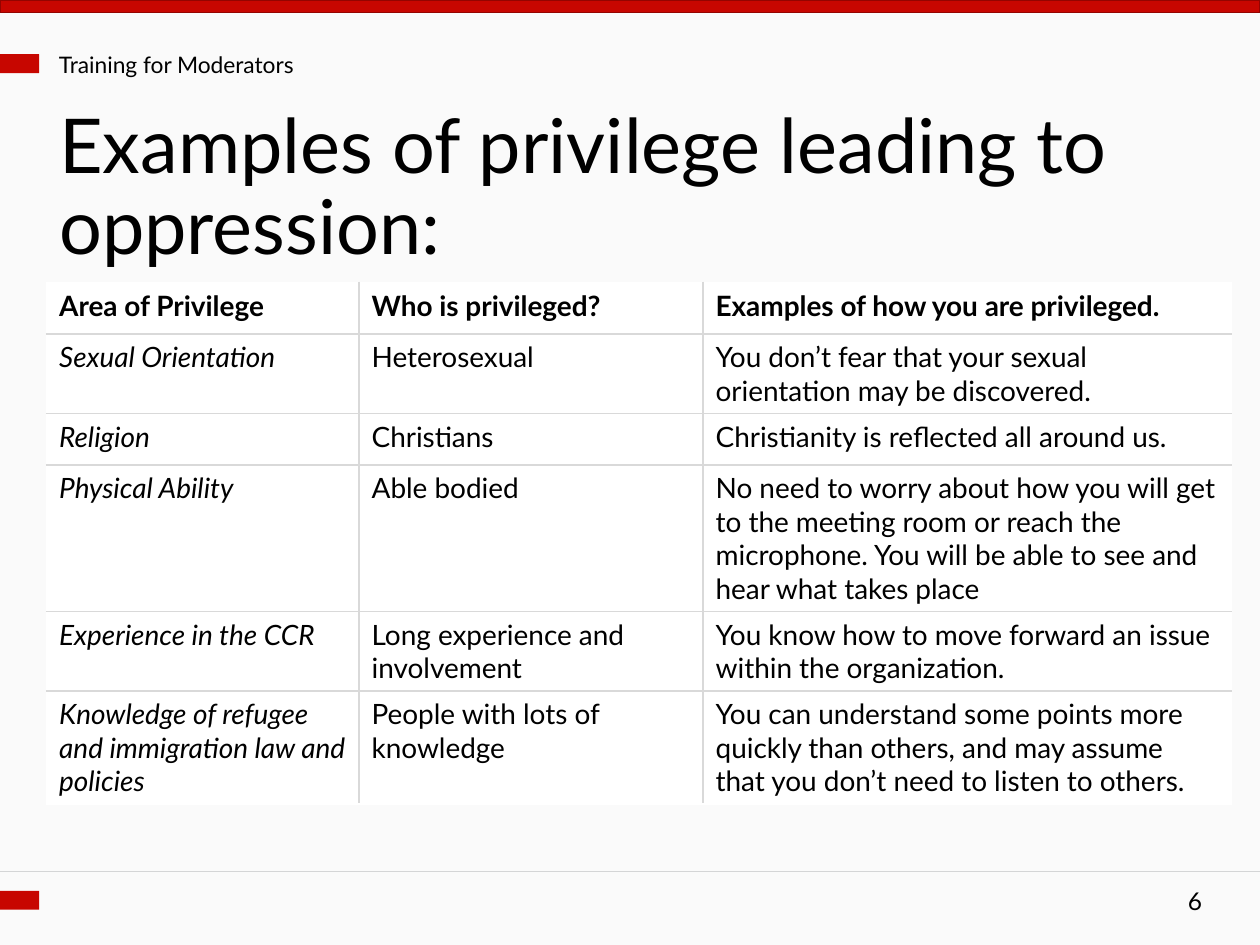
"""Builds the slide on examples of privilege leading to oppression."""
from lxml import etree
from pptx import Presentation
from pptx import util as u
from pptx.dml.color import RGBColor
from pptx.enum import shapes, text
from pptx.oxml.ns import qn

FONT = "Lato"
COLORS = {"bg": "FAFAFA", "red": "C70600", "dark_red": "930400", "rule": "D4D5D6",
          "grid": "D9D9D9", "white": "FFFFFF", "black": "000000"}
TITLE = "Examples of privilege leading to oppression:"
HEADER = "Training for Moderators"
PAGE = "6"
ROWS = [
    ("Area of Privilege", "Who is privileged?", "Examples of how you are privileged."),
    ("Sexual Orientation", "Heterosexual",
     "You don’t fear that your sexual orientation may be discovered."),
    ("Religion", "Christians", "Christianity is reflected all around us."),
    ("Physical Ability", "Able bodied",
     "No need to worry about how you will get to the meeting room or reach the "
     "microphone. You will be able to see and hear what takes place"),
    ("Experience in the CCR", "Long experience and involvement",
     "You know how to move forward an issue within the organization."),
    ("Knowledge of refugee and immigration law and policies",
     "People with lots of knowledge",
     "You can understand some points more quickly than others, and may assume "
     "that you don’t need to listen to others."),
]
COL_WIDTHS = (2.48, 2.73, 4.19)
ROW_HEIGHT = 0.41
TABLE_AT = (0.37, 2.24, sum(COL_WIDTHS), 4.14)
BAR_AT = (0, 0, 10, 0.1)
TAB_TOPS = (0.43, 7.07)
RULE_Y = 6.92


def rgb(name):
    return RGBColor.from_string(COLORS[name])


def inches(values):
    return [u.Inches(v) for v in values]


def write(tf, words, size, align=text.PP_ALIGN.LEFT, **font):
    p = tf.paragraphs[0]
    p.alignment = align
    r = p.add_run()
    r.text = words
    for key, value in {"name": FONT, "size": u.Pt(size), **font}.items():
        setattr(r.font, key, value)
    r.font.color.rgb = rgb("black")
    return p


def frame_text(sp):
    tf = sp.text_frame
    for key, value in {"word_wrap": True, "auto_size": text.MSO_AUTO_SIZE.NONE,
                       "vertical_anchor": text.MSO_ANCHOR.MIDDLE}.items():
        setattr(tf, key, value)
    return tf


def add_text(s, at, words, size, align=text.PP_ALIGN.LEFT):
    write(frame_text(s.shapes.add_textbox(*inches(at))), words, size, align)


def add_block(s, kind, at, line=None):
    sp = s.shapes.add_shape(kind, *inches(at))
    sp.shadow.inherit = False
    sp.fill.solid()
    sp.fill.fore_color.rgb = rgb("red")
    if line:
        sp.line.color.rgb = rgb(line)
        sp.line.width = u.Pt(1)
    else:
        sp.line.fill.background()
    return sp


def add_rule(s, y):
    rule = s.shapes.add_connector(shapes.MSO_CONNECTOR.STRAIGHT, *inches((0, y, 10, y)))
    rule.line.color.rgb = rgb("rule")
    rule.line.width = u.Pt(0.5)
    etree.SubElement(rule.element.spPr, qn("a:effectLst"))


def set_borders(cell, outer):
    tc_pr = cell._tc.get_or_add_tcPr()
    for side in "LRTB":
        ln = etree.SubElement(tc_pr, qn(f"a:ln{side}"), w=str(u.Pt(1)))
        fill = etree.SubElement(ln, qn("a:solidFill"))
        color = COLORS["white" if outer[side] else "grid"]
        etree.SubElement(fill, qn("a:srgbClr"), val=color)


def add_privilege_table(s):
    last_row, last_col = len(ROWS) - 1, len(COL_WIDTHS) - 1
    frame = s.shapes.add_table(len(ROWS), len(COL_WIDTHS), *inches(TABLE_AT))
    table = frame.table
    for col, width in zip(table.columns, COL_WIDTHS):
        col.width = u.Inches(width)
    for i, row in enumerate(ROWS):
        table.rows[i].height = u.Inches(ROW_HEIGHT)
        for j, words in enumerate(row):
            cell = table.cell(i, j)
            set_borders(cell, {"L": j == 0, "R": j == last_col,
                               "T": i == 0, "B": i == last_row})
            cell.fill.solid()
            cell.fill.fore_color.rgb = rgb("white")
            write(cell.text_frame, words, 16, bold=i == 0, italic=i > 0 and j == 0)
    frame.height = u.Inches(TABLE_AT[3])


def main():
    prs = Presentation()
    prs.slide_width, prs.slide_height = inches((10, 7.5))
    s = prs.slides.add_slide(prs.slide_layouts[5])
    s.background.fill.solid()
    s.background.fill.fore_color.rgb = rgb("bg")

    add_block(s, shapes.MSO_SHAPE.RECTANGLE, BAR_AT, "dark_red")
    for top in TAB_TOPS:
        tab = add_block(s, shapes.MSO_SHAPE.ROUNDED_RECTANGLE, (0, top, 0.31, 0.15))
        tab.adjustments[0] = 0.01
    add_rule(s, RULE_Y)

    title = s.shapes.title
    title.left, title.top, title.width, title.height = inches((0.37, 0.88, 9.27, 1.25))
    write(frame_text(title), TITLE, 43.2).line_spacing = 0.9

    add_privilege_table(s)
    add_text(s, (0.37, 0.38, 5.84, 0.27), HEADER, 13)
    add_text(s, (7.06, 6.95, 2.58, 0.4), PAGE, 14, text.PP_ALIGN.RIGHT)
    prs.save("out.pptx")


if __name__ == "__main__":
    main()
